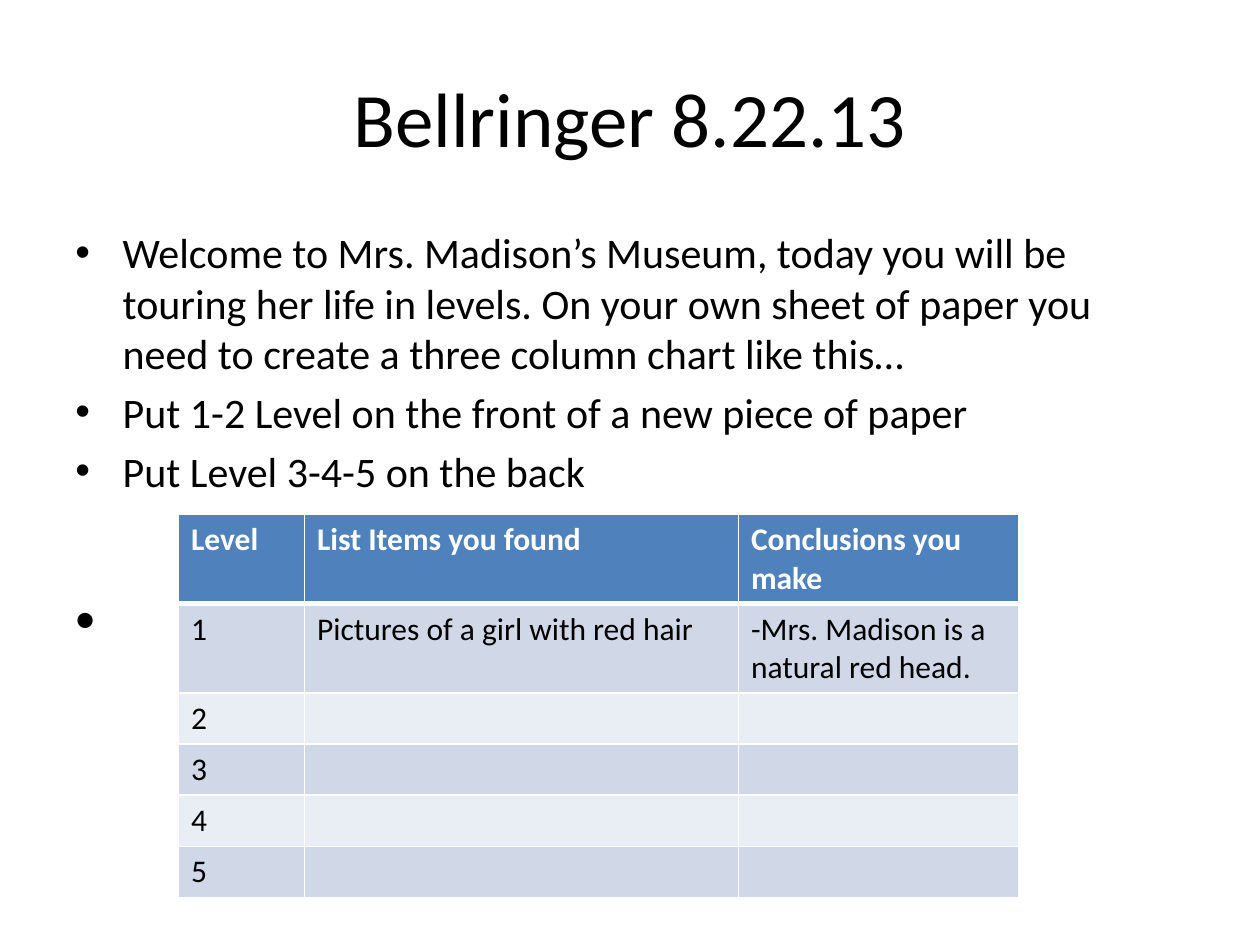
from dataclasses import dataclass

from lxml.etree import SubElement
from pptx import Presentation
from pptx.dml.color import RGBColor
from pptx.enum.text import MSO_ANCHOR, PP_ALIGN
from pptx.oxml.ns import qn
from pptx.util import Pt


@dataclass(frozen=True)
class Theme:
    font: str = "Calibri"
    text: str = "000000"
    white: str = "FFFFFF"
    header: str = "4F81BD"
    bands: tuple = ("D0D8E8", "E9EDF4")
    title_size: int = 44
    body_size: int = 24
    blank_size: int = 32
    table_size: int = 18


THEME = Theme()
BULLETS = [
    "Welcome to Mrs. Madison’s Museum, today you will be touring her life in levels. "
    "On your own sheet of paper you need to create a three column chart like this…",
    "Put 1-2 Level on the front of a new piece of paper",
    "Put Level 3-4-5 on the back",
]
ROWS = [
    ["Level", "List Items you found", "Conclusions you make"],
    ["1", "Pictures of a girl with red hair", "-Mrs. Madison is a natural red head."],
    *[[str(level), "", ""] for level in range(2, 6)],
]
COL_WIDTHS = [72, 248, 160]
ROW_HEIGHTS = [51, 51] + [29.2] * 4


def add_run(p, text, size, color=THEME.text, bold=False):
    r = p.add_run()
    r.text = text
    for name, value in {"name": THEME.font, "size": Pt(size), "bold": bold}.items():
        setattr(r.font, name, value)
    r.font.color.rgb = RGBColor.from_string(color)


def add_title(s, text):
    sp = s.shapes.title
    box = {"left": Pt(36), "top": Pt(21.6), "width": Pt(648), "height": Pt(90)}
    for name, value in box.items():
        setattr(sp, name, value)
    sp.text_frame.vertical_anchor = MSO_ANCHOR.MIDDLE
    p = sp.text_frame.paragraphs[0]
    p.alignment = PP_ALIGN.CENTER
    add_run(p, text, THEME.title_size)


def add_bullet(p, text, size, before):
    p.space_before = Pt(before)
    pPr = p._p.get_or_add_pPr()
    pPr.set("marL", str(Pt(27)))
    pPr.set("indent", str(-Pt(27)))
    SubElement(pPr, qn("a:buFont"), typeface="Arial")
    SubElement(pPr, qn("a:buChar"), char="•")
    add_run(p, text, size)


def add_body(s):
    tf = s.shapes.add_textbox(Pt(36), Pt(126), Pt(648), Pt(356.4)).text_frame
    tf.word_wrap = True
    items = [(text, THEME.body_size, 4.8) for text in BULLETS]
    items.append((" ", THEME.blank_size, 52))
    for i, item in enumerate(items):
        p = tf.add_paragraph() if i else tf.paragraphs[0]
        add_bullet(p, *item)


def add_border(tcPr, side, width):
    ln = SubElement(tcPr, qn(f"a:ln{side}"), w=str(Pt(width)))
    fill = SubElement(ln, qn("a:solidFill"))
    SubElement(fill, qn("a:srgbClr"), val=THEME.white)


def format_cell(cell, text, row):
    header = row == 0
    widths = {"L": 1, "R": 1, "T": 3 if row == 1 else 1, "B": 3 if header else 1}
    tcPr = cell._tc.get_or_add_tcPr()
    for side, width in widths.items():
        add_border(tcPr, side, width)
    fill = THEME.header if header else THEME.bands[(row - 1) % 2]
    cell.fill.solid()
    cell.fill.fore_color.rgb = RGBColor.from_string(fill)
    if text:
        color = THEME.white if header else THEME.text
        add_run(cell.text_frame.paragraphs[0], text, THEME.table_size, color, header)


def add_level_table(s):
    table = s.shapes.add_table(
        len(ROWS), len(COL_WIDTHS), Pt(102), Pt(294),
        Pt(sum(COL_WIDTHS)), Pt(sum(ROW_HEIGHTS)),
    ).table
    for col, width in zip(table.columns, COL_WIDTHS):
        col.width = Pt(width)
    for i, (row, height) in enumerate(zip(table.rows, ROW_HEIGHTS)):
        row.height = Pt(height)
        for cell, text in zip(row.cells, ROWS[i]):
            format_cell(cell, text, i)


def main():
    prs = Presentation()
    prs.slide_width, prs.slide_height = Pt(720), Pt(540)
    s = prs.slides.add_slide(prs.slide_layouts[5])
    add_title(s, "Bellringer 8.22.13")
    add_body(s)
    add_level_table(s)
    prs.save("out.pptx")


if __name__ == "__main__":
    main()
